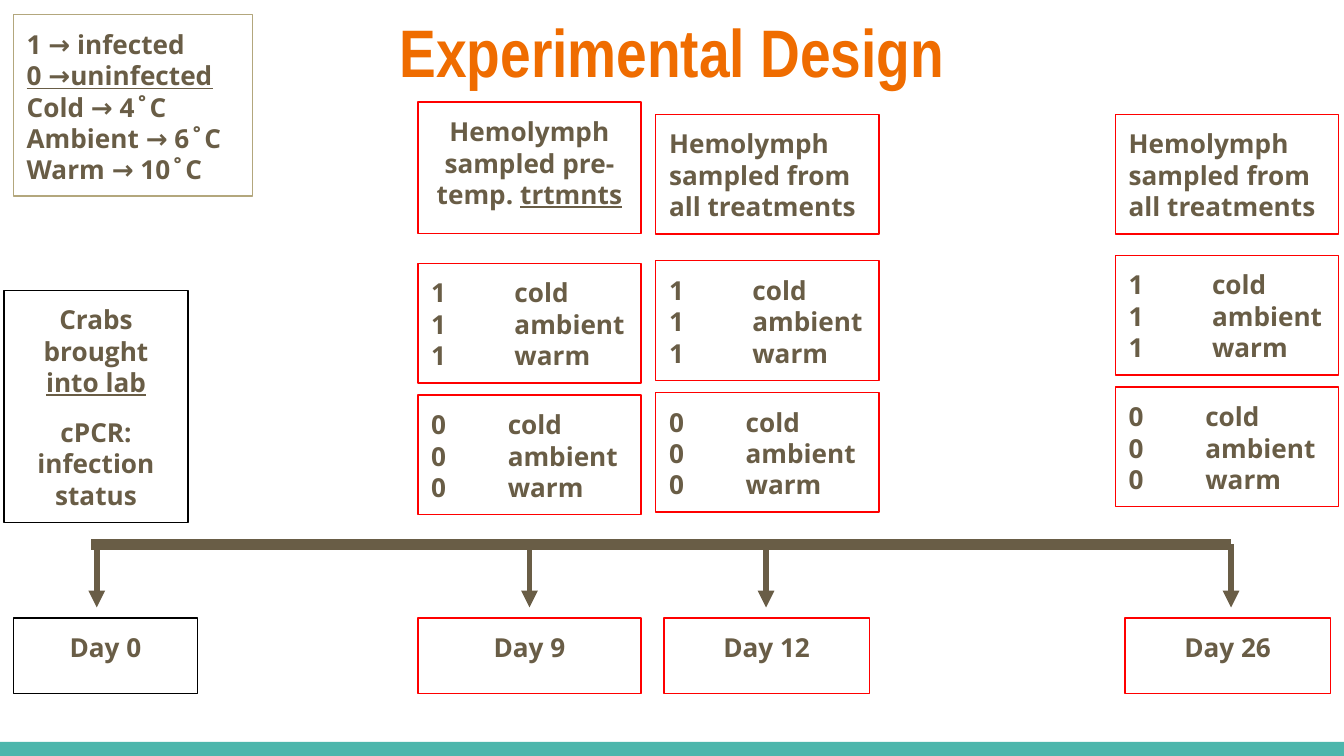
from dataclasses import dataclass
from typing import Any

from lxml.etree import SubElement
from pptx import Presentation
from pptx.dml.color import RGBColor
from pptx.enum.shapes import MSO_CONNECTOR as Connector, MSO_SHAPE as Shape
from pptx.enum.text import MSO_ANCHOR as Anchor, MSO_AUTO_SIZE as AutoSize, PP_ALIGN as Align
from pptx.oxml.ns import qn
from pptx.util import Inches, Pt

COLUMNS, ROWS = 100, 56.25
BROWN, RED, BLACK, TAN = "695D46", "FF0000", "000000", "B3A77D"
ORANGE, TEAL = "EF6C00", "4DB6AC"


def color(value):
    """Turn a hex string into a colour."""
    return RGBColor.from_string(value)


def write(para, text, font="Open Sans", size=14, ink=BROWN, underline=False):
    """Add a bold formatted span to a paragraph."""
    span = para.add_run()
    span.text = text
    span.font.name, span.font.size, span.font.bold = font, Pt(size), True
    span.font.color.rgb = color(ink)
    if underline:
        span.font.underline = True


def set_tab(para, columns):
    """Place one left tab stop in a paragraph."""
    stops = SubElement(para._p.get_or_add_pPr(), qn("a:tabLst"))
    SubElement(stops, qn("a:tab"), pos=str(Inches(columns / 10)), algn="l")


@dataclass
class Painter:
    """Draw elements on one slide in grid columns and rows."""

    deck: Any
    slide: Any
    inset: float = 1
    outline: float = 0.75

    def place(self, left, top, width, height):
        """Convert a grid rectangle to slide lengths."""
        column, row = self.deck.slide_width / COLUMNS, self.deck.slide_height / ROWS
        return [round(n) for n in (left * column, top * row, width * column, height * row)]

    def set_frame(self, frame, anchor):
        """Apply the shared margins, wrapping and anchor."""
        frame.word_wrap, frame.auto_size = True, AutoSize.NONE
        frame.vertical_anchor = anchor
        margin = self.place(self.inset, 0, 0, 0)[0]
        frame.margin_left = frame.margin_right = margin
        frame.margin_top = frame.margin_bottom = margin

    def title(self, text, *area):
        """Fill and position the title placeholder."""
        box = self.slide.shapes.title
        box.left, box.top, box.width, box.height = self.place(*area)
        self.set_frame(box.text_frame, Anchor.MIDDLE)
        para = box.text_frame.paragraphs[0]
        para.alignment = Align.CENTER
        write(para, text, font="Arial Narrow", size=36, ink=ORANGE)

    def bar(self, fill, *area):
        """Draw a solid bar without an outline."""
        bar = self.slide.shapes.add_shape(Shape.RECTANGLE, *self.place(*area))
        bar.shadow.inherit = False
        bar.fill.solid()
        bar.fill.fore_color.rgb = color(fill)
        bar.line.fill.background()

    def box(self, lines, *area, edge=RED, align=Align.LEFT, gap=0, tab=None):
        """Draw an outlined box whose lines are pairs of plain and underlined text."""
        box = self.slide.shapes.add_shape(Shape.RECTANGLE, *self.place(*area))
        box.shadow.inherit = False
        box.fill.background()
        box.line.color.rgb, box.line.width = color(edge), Pt(self.outline)
        frame = box.text_frame
        self.set_frame(frame, Anchor.TOP)
        for index, (plain, underlined) in enumerate(lines):
            para = frame.add_paragraph() if index else frame.paragraphs[0]
            para.alignment = align
            if index and gap:
                para.space_before = Pt(gap)
            if tab:
                set_tab(para, tab)
            if plain:
                write(para, plain)
            if underlined:
                write(para, underlined, underline=True)

    def line(self, start, end, width, arrow=False):
        """Draw a straight line, with an arrowhead on request."""
        line = self.slide.shapes.add_connector(
            Connector.STRAIGHT, *self.place(*start, *end))
        line.line.color.rgb, line.line.width = color(BROWN), Pt(width)
        if arrow:
            SubElement(line.line._get_or_add_ln(), qn("a:tailEnd"), type="triangle")
        SubElement(line._element.spPr, qn("a:effectLst"))


def main():
    """Build the experimental design timeline."""
    deck = Presentation()
    deck.slide_width = Inches(10)
    deck.slide_height = deck.slide_width * 9 // 16
    page = Painter(deck, deck.slides.add_slide(deck.slide_layouts[5]))

    page.bar(TEAL, 0, 55.2, COLUMNS, ROWS - 55.2)
    page.title("Experimental Design", 3.4, -0.1, 93.2, 7.7)

    axis, tip = 40.5, 45.2
    page.line((6.8, axis), (91.6, axis), 6)
    days = [("Day 0", 7.2, 1, 13.7, BLACK), ("Day 9", 39.4, 31.1, 16.6, RED),
            ("Day 12", 57, 49.4, 15.3, RED), ("Day 26", 91.6, 83.7, 15.3, RED)]
    for day, center, left, width, edge in days:
        page.line((center, axis), (center, tip), 3, arrow=True)
        page.box([(day, "")], left, 46, width, 5.6, edge=edge, align=Align.CENTER)

    legend = [("1 → infected", ""), ("", "0 →uninfected"), ("Cold → 4˚C", ""),
              ("Ambient → 6˚C", ""), ("Warm → 10˚C", "")]
    page.box(legend, 1, 1.1, 17.8, 13.5, edge=TAN)
    page.box([("Crabs brought ", "into lab"), ("cPCR: infection status", "")],
             0.3, 21.6, 13.7, 17.3, edge=BLACK, align=Align.CENTER, gap=10)

    width, height, step = 16.6, 8.9, 9.8
    page.box([("Hemolymph sampled pre-temp. ", "trtmnts")],
             31.1, 7.6, width, 9.8, align=Align.CENTER)
    for left in (48.8, 83):
        page.box([("Hemolymph sampled from all treatments", "")], left, 8.5, width, height)

    for left, top in ((31.1, 19.6), (48.8, 19.4), (83, 19)):
        for index, (status, tab) in enumerate((("1", 6.2), ("0", 5.7))):
            groups = [(f"{status}\t{group}", "") for group in ("cold", "ambient", "warm")]
            page.box(groups, left, top + index * step, width, height, tab=tab)

    deck.save("out.pptx")


if __name__ == "__main__":
    main()
